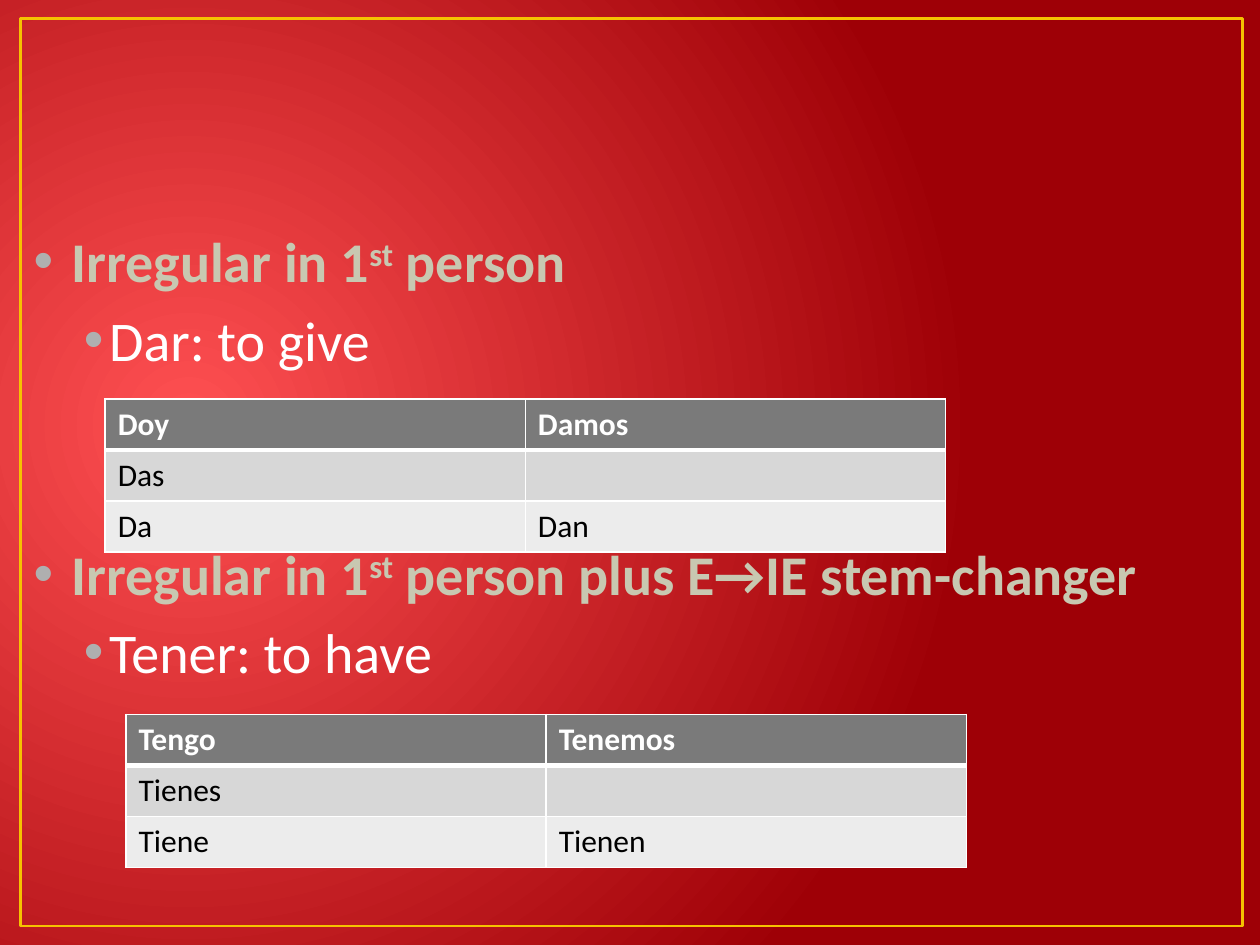
from lxml.etree import SubElement
from pptx import Presentation
from pptx.dml.color import RGBColor
from pptx.enum.shapes import MSO_SHAPE
from pptx.oxml import parse_xml
from pptx.oxml.ns import nsdecls, qn
from pptx.util import Cm, Pt

# Content: each topic is a heading (text, superscript, text), a verb and its forms
TOPICS = [
    {"heading": ("Irregular in 1", "st", " person"),
     "verb": "Dar: to give",
     "forms": [("Doy", "Damos"), ("Das", ""), ("Da", "Dan")],
     "table_at": (Cm(2.12), Cm(8.04))},
    {"heading": ("Irregular in 1", "st", " person plus E→IE stem-changer"),
     "verb": "Tener: to have",
     "forms": [("Tengo", "Tenemos"), ("Tienes", ""), ("Tiene", "Tienen")],
     "table_at": (Cm(2.54), Cm(14.4))},
]

FONT = "Calibri"
WHITE = RGBColor(0xFF, 0xFF, 0xFF)
BLACK = RGBColor(0x00, 0x00, 0x00)
GLOW = RGBColor(0xFF, 0x50, 0x52)
DEEP_RED = RGBColor(0x9E, 0x00, 0x06)
GOLD = RGBColor(0xF5, 0xC2, 0x01)
SAND = RGBColor(0xC8, 0xC8, 0xB1)
BULLET_GRAY = RGBColor(0xAF, 0xAF, 0xAF)
ROW_FILLS = [RGBColor(0x7A, 0x7A, 0x7A), RGBColor(0xD7, 0xD7, 0xD7),
             RGBColor(0xEC, 0xEC, 0xEC)]

COLUMN_WIDTH, ROW_HEIGHT = Cm(8.47), Cm(1.03)
LINE_GAP = Pt(6.4)
TABLE_GAP = Pt(95.2)  # room for a table between two topics


def write(paragraph, text, size=32, color=WHITE, bold=False, raised=False):
    run = paragraph.add_run()
    run.text = text
    run.font.name = FONT
    run.font.size = Pt(size)
    run.font.bold = bold
    run.font.color.rgb = color
    if raised:
        run.font._element.set("baseline", "30000")


def set_bullet(paragraph, margin, hanging):
    properties = paragraph._p.get_or_add_pPr()
    properties.set("marL", str(margin))
    properties.set("indent", str(-hanging))
    bullet_color = SubElement(properties, qn("a:buClr"))
    SubElement(bullet_color, qn("a:srgbClr")).set("val", str(BULLET_GRAY))
    SubElement(properties, qn("a:buFont")).set("typeface", "Arial")
    SubElement(properties, qn("a:buChar")).set("char", "•")


def set_borders(cell, row):
    widths = {"lnL": 1, "lnR": 1, "lnT": 3 if row == 1 else 1,
              "lnB": 3 if row == 0 else 1}
    properties = cell._tc.get_or_add_tcPr()
    for position, (side, width) in enumerate(widths.items()):
        properties.insert(position, parse_xml(
            f'<a:{side} {nsdecls("a")} w="{Pt(width)}"><a:solidFill>'
            f'<a:srgbClr val="{WHITE}"/></a:solidFill></a:{side}>'))


def add_forms(slide, forms, left, top):
    table = slide.shapes.add_table(
        len(forms), len(forms[0]), left, top,
        COLUMN_WIDTH * len(forms[0]), ROW_HEIGHT * len(forms)).table
    for column in table.columns:
        column.width = COLUMN_WIDTH
    for row, words in enumerate(forms):
        table.rows[row].height = ROW_HEIGHT
        for column, word in enumerate(words):
            cell = table.cell(row, column)
            set_borders(cell, row)
            cell.fill.solid()
            cell.fill.fore_color.rgb = ROW_FILLS[row]
            if word:
                write(cell.text_frame.paragraphs[0], word, size=18,
                      color=BLACK if row else WHITE, bold=row == 0)


def main():
    prs = Presentation()
    prs.slide_width, prs.slide_height = Cm(25.4), Cm(19.05)
    slide = prs.slides.add_slide(prs.slide_layouts[6])

    # Background: a round glow left of the middle
    background = slide.background.fill
    background.gradient()
    for stop, color in zip(background.gradient_stops, (GLOW, DEEP_RED)):
        stop.color.rgb = color
    direction = slide._element.find(".//" + qn("a:lin"))
    direction.getparent().replace(direction, parse_xml(
        f'<a:path {nsdecls("a")} path="circle"><a:fillToRect '
        'l="15000" t="50000" r="85000" b="60000"/></a:path>'))

    # Gold frame
    frame = slide.shapes.add_shape(
        MSO_SHAPE.RECTANGLE, Cm(0.41), Cm(0.38), Cm(24.64), Cm(18.29))
    frame.shadow.inherit = False
    frame.fill.background()
    frame.line.color.rgb = GOLD
    frame.line.width = Pt(1.5)

    # Topic headings and verbs
    outline = slide.shapes.add_textbox(
        Cm(0.43), Cm(4.45), Cm(23.7), Cm(12.57)).text_frame
    outline.word_wrap = True
    for number, topic in enumerate(TOPICS):
        heading = outline.add_paragraph() if number else outline.paragraphs[0]
        heading.space_before = TABLE_GAP if number else LINE_GAP
        set_bullet(heading, Cm(0.76), Cm(0.76))
        for part, text in enumerate(topic["heading"]):
            write(heading, text, color=SAND, bold=True, raised=part == 1)
        verb = outline.add_paragraph()
        verb.level = 1
        verb.space_before = LINE_GAP
        set_bullet(verb, Cm(1.52), Cm(0.51))
        write(verb, topic["verb"])

    # Verb forms
    for topic in TOPICS:
        add_forms(slide, topic["forms"], *topic["table_at"])

    prs.save("out.pptx")


if __name__ == "__main__":
    main()
